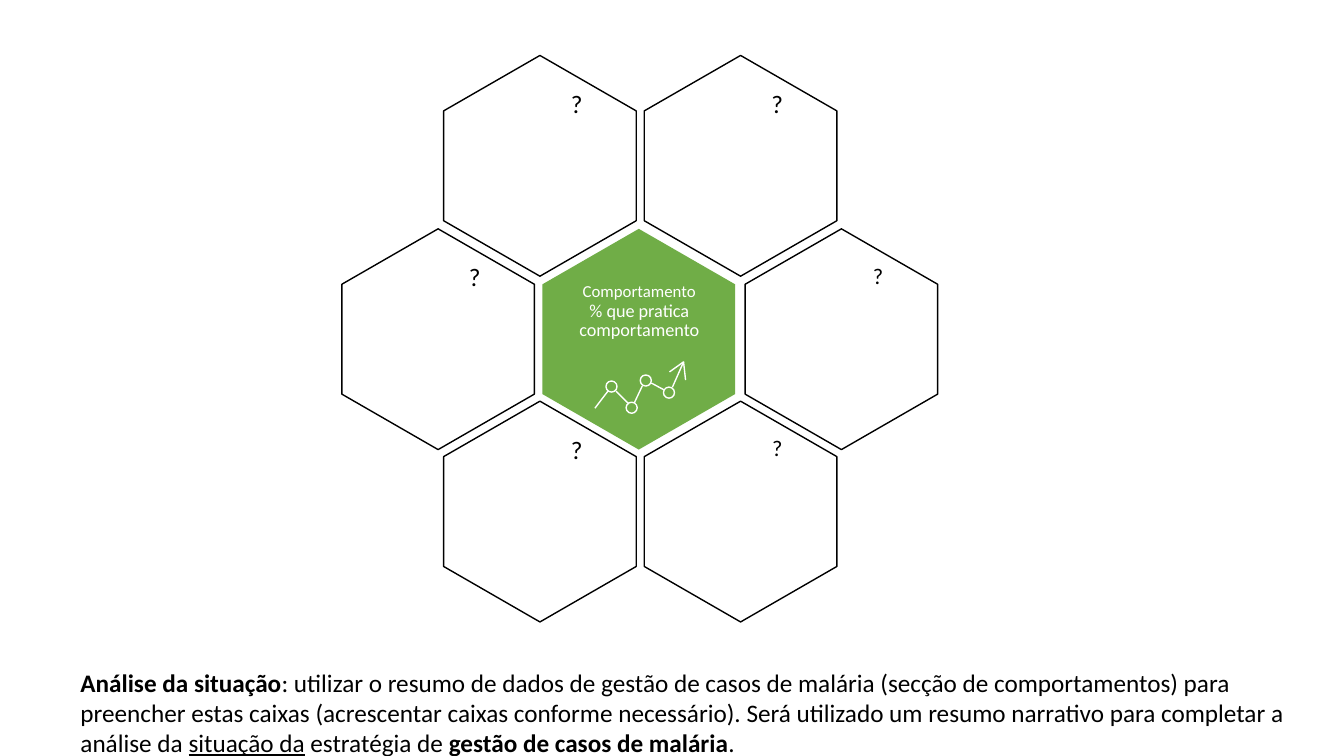
import pptx
import pptx.util
import pptx.dml.color
import pptx.enum.shapes
import pptx.enum.text
import pptx.oxml
import pptx.oxml.ns
from pptx.util import Inches

THEME = {
    "font": "Calibri",
    "black": "000000", "white": "FFFFFF", "green": "70AD47",
    "body": 18, "mark": 18, "small": 16, "title": 12, "label": 13,
    "line": 1,
}
KIND = pptx.enum.shapes.MSO_SHAPE
HEX_W, HEX_H = 2.19, 1.91
# Left, top and mark size of each outer cell
CELLS = [
    (4.26, 0.69, "mark"), (4.26, 4.12, "mark"), (6.25, 4.12, "small"),
    (3.25, 2.41, "mark"), (6.25, 0.69, "mark"), (7.25, 2.41, "small"),
]
# Trend icon: line ends, ring corners and arrow tip
LINKS = [
    (6.03, 3.88, 5.9, 4.05), (6.23, 4, 6.11, 3.88), (6.37, 3.83, 6.29, 4),
    (6.59, 3.87, 6.46, 3.8), (6.78, 3.59, 6.67, 3.84),
]
RINGS = [(6.58, 3.84), (6.35, 3.72), (6.21, 3.99), (6.01, 3.78)]
RING = 0.11
TIP = [(6.8, 3.77), (6.78, 3.59), (6.64, 3.69)]


def color(name):
    return pptx.dml.color.RGBColor.from_string(THEME[name])


def apply(item, form):
    for key, value in form.items():
        setattr(item, key, value)


def paint(shape, fill=None, line=None):
    """Set fill and line, and drop the shadow."""
    shape.shadow.inherit = False
    if fill:
        shape.fill.solid()
        shape.fill.fore_color.rgb = color(fill)
    else:
        shape.fill.background()
    if line:
        stroke(shape, line)
    else:
        shape.line.fill.background()


def stroke(shape, name):
    shape.line.color.rgb = color(name)
    shape.line.width = pptx.util.Pt(THEME["line"])


def add_text(slide, box, pad, paras, tint, form):
    """Each paragraph is a list of (text, size, font format) runs."""
    frame = slide.shapes.add_textbox(*map(Inches, box)).text_frame
    sides = ("margin_left", "margin_top", "margin_right", "margin_bottom")
    apply(frame, dict(zip(sides, map(Inches, pad)), word_wrap=True))
    for i, runs in enumerate(paras):
        para = frame.add_paragraph() if i else frame.paragraphs[0]
        apply(para, form)
        for text, size, extra in runs:
            run = para.add_run()
            run.text = text
            apply(run.font, {"name": THEME["font"],
                             "size": pptx.util.Pt(THEME[size]), **extra})
            run.font.color.rgb = color(tint)


def add_label(slide, box, paras, tint):
    form = {"alignment": pptx.enum.text.PP_ALIGN.CENTER, "line_spacing": 0.9}
    add_text(slide, box, (0.73, 0, 0, 0), paras, tint, form)


def add_hex(slide, left, top, **look):
    cell = slide.shapes.add_shape(
        KIND.HEXAGON, *map(Inches, (left, top, HEX_W, HEX_H)))
    cell.rotation = 90
    cell.adjustments[0] = 0.288
    cell.adjustments[1] = 1.155
    paint(cell, **look)


def add_link(group, ends):
    link = group.shapes.add_connector(
        pptx.enum.shapes.MSO_CONNECTOR.STRAIGHT, *map(Inches, ends))
    stroke(link, "white")
    props = link._element.spPr
    props.append(pptx.oxml.parse_xml(
        "<a:effectLst %s/>" % pptx.oxml.ns.nsdecls("a")))


def add_trend(slide):
    group = slide.shapes.add_group_shape()
    points = [(Inches(x), Inches(y)) for x, y in TIP]
    pen = group.shapes.build_freeform(*points[0])
    pen.add_line_segments(points[1:], close=False)
    paint(pen.convert_to_shape(), line="white")
    for ends in LINKS:
        add_link(group, ends)
    for left, top in RINGS:
        ring = group.shapes.add_shape(
            KIND.OVAL, *map(Inches, (left, top, RING, RING)))
        paint(ring, line="white")


def main():
    deck = pptx.Presentation()
    apply(deck, {"slide_width": Inches(13.33), "slide_height": Inches(7.5)})
    slide = deck.slides.add_slide(deck.slide_layouts[6])

    # Instruction under the cells
    bold = {"bold": True}
    add_text(slide, (0.7, 6.57, 12.16, 0.71), (0.1, 0.05, 0.1, 0.05), [[
        ("Análise da situação", "body", bold),
        (": utilizar o resumo de dados de gestão de casos de malária "
         "(secção de comportamentos) para preencher estas caixas "
         "(acrescentar caixas conforme necessário). Será utilizado um "
         "resumo narrativo para completar a análise da ", "body", {}),
        ("situação da", "body", {"underline": True}),
        (" estratégia de ", "body", {}),
        ("gestão de casos de malária", "body", bold),
        (".", "body", {}),
    ]], "black", {})

    # Outer cells, each with its mark
    for left, top, size in CELLS:
        add_hex(slide, left, top, line="black")
        add_label(slide, (left + 0.46, top + 0.22, 1.27, 1.46),
                  [[("?", size, {})]], "black")

    # Centre cell with the trend icon
    add_hex(slide, 5.24, 2.41, fill="green")
    add_label(slide, (4.98, 2.81, 1.99, 1.46), [
        [("Comportamento", "title", {})],
        [("% que pratica comportamento", "label", {})],
    ], "white")
    add_trend(slide)

    deck.save("out.pptx")


if __name__ == "__main__":
    main()
